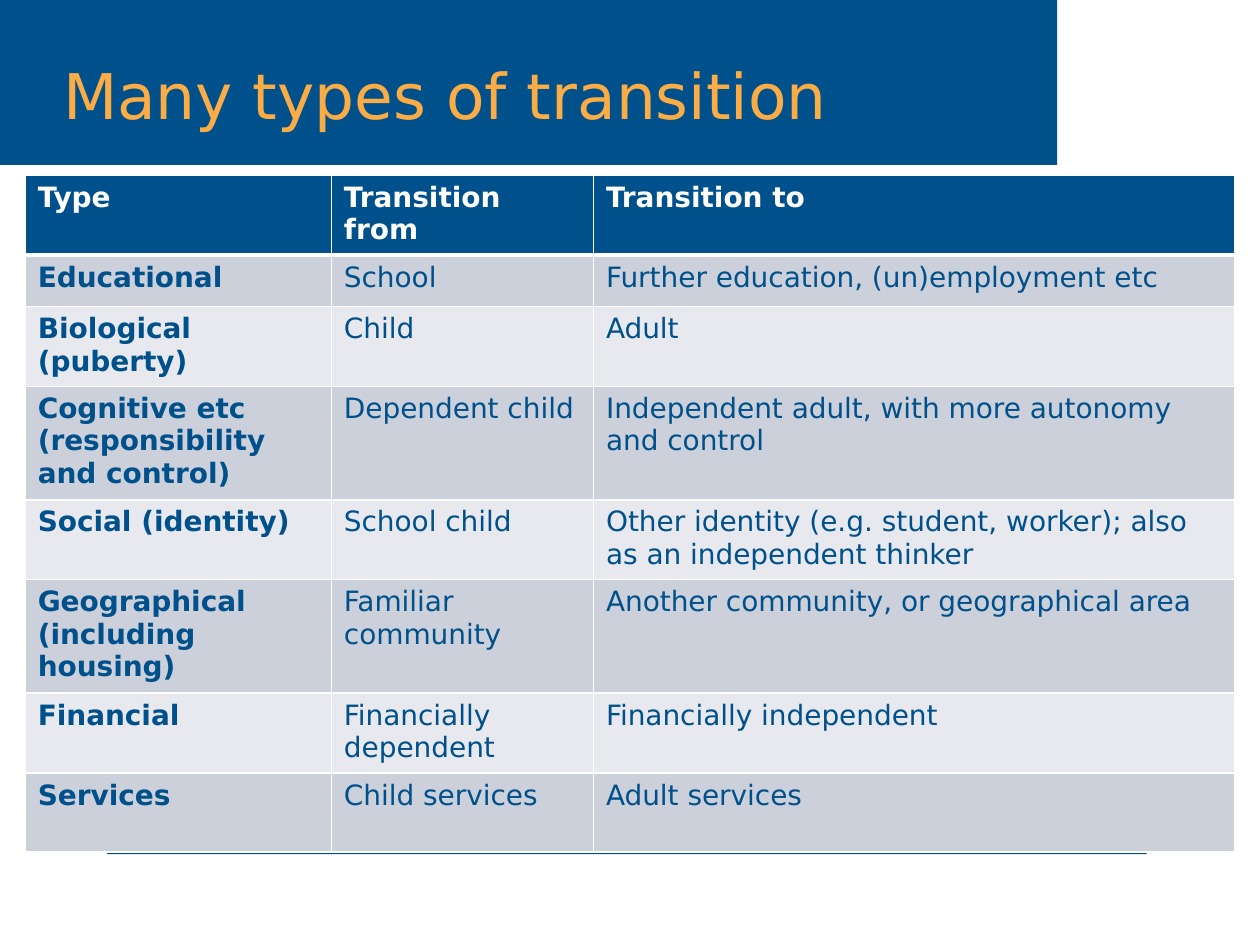
from lxml.etree import SubElement
from pptx import Presentation
from pptx.dml.color import RGBColor
from pptx.enum.shapes import MSO_SHAPE
from pptx.enum.text import MSO_ANCHOR
from pptx.oxml.ns import qn
from pptx.util import Inches, Pt

FONT = "DejaVu Sans"
BLUE = RGBColor(0x00, 0x50, 0x8B)
ORANGE = RGBColor(0xFB, 0xAC, 0x45)
WHITE = RGBColor(0xFF, 0xFF, 0xFF)
BAND_DARK = RGBColor(0xCC, 0xD0, 0xDA)
BAND_LIGHT = RGBColor(0xE7, 0xE9, 0xEE)

COL_WIDTHS = [2.43, 2.08, 5.09]
ROW_HEIGHTS = [0.63, 0.41, 0.41, 0.9, 0.63, 0.63, 0.63, 0.63]
ROWS = [
    ("Type", "Transition from", "Transition to"),
    ("Educational", "School", "Further education, (un)employment etc"),
    ("Biological (puberty)", "Child", "Adult"),
    ("Cognitive etc (responsibility and control)", "Dependent child",
     "Independent adult, with more autonomy and control"),
    ("Social (identity)", "School child",
     "Other identity (e.g. student, worker); also as an independent thinker"),
    ("Geographical (including housing)", "Familiar community",
     "Another community, or geographical area"),
    ("Financial", "Financially dependent", "Financially independent"),
    ("Services", "Child services", "Adult services"),
]


def write_text(tf, text, size=16, color=BLUE, bold=False):
    tf.word_wrap = True
    r = tf.paragraphs[0].add_run()
    r.text = text
    r.font.name = FONT
    r.font.size = Pt(size)
    r.font.bold = bold
    r.font.color.rgb = color


def add_bar(s, left, top, width, height):
    sp = s.shapes.add_shape(MSO_SHAPE.RECTANGLE, Inches(left), Inches(top),
                            Inches(width), Inches(height))
    sp.shadow.inherit = False
    sp.fill.solid()
    sp.fill.fore_color.rgb = BLUE
    sp.line.fill.background()


def add_title(s, text):
    sp = s.shapes.add_textbox(Inches(0.43), Inches(0.36), Inches(9.09), Inches(0.72))
    tf = sp.text_frame
    tf.vertical_anchor = MSO_ANCHOR.BOTTOM
    tf.margin_left = Inches(0.07)
    tf.margin_bottom = Inches(0.03)
    write_text(tf, text, size=36, color=ORANGE)


def set_borders(cell, bottom):
    tcPr = cell._tc.get_or_add_tcPr()
    widths = {"a:lnL": 1, "a:lnR": 1, "a:lnT": 1, "a:lnB": bottom}
    for i, (tag, width) in enumerate(widths.items()):
        ln = SubElement(tcPr, qn(tag), w=str(Pt(width)))
        fill = SubElement(ln, qn("a:solidFill"))
        SubElement(fill, qn("a:srgbClr"), val=str(WHITE))
        tcPr.insert(i, ln)


def add_transition_table(s):
    table = s.shapes.add_table(
        len(ROWS), len(COL_WIDTHS), Inches(0.2), Inches(1.39),
        Inches(sum(COL_WIDTHS)), Inches(sum(ROW_HEIGHTS))).table
    for column, width in zip(table.columns, COL_WIDTHS):
        column.width = Inches(width)
    for row, height in zip(table.rows, ROW_HEIGHTS):
        row.height = Inches(height)
    for i, texts in enumerate(ROWS):
        header = i == 0
        band = BLUE if header else BAND_DARK if i % 2 else BAND_LIGHT
        for j, text in enumerate(texts):
            cell = table.cell(i, j)
            cell.fill.solid()
            cell.fill.fore_color.rgb = band
            set_borders(cell, bottom=3 if header else 1)
            write_text(cell.text_frame, text, color=WHITE if header else BLUE,
                       bold=header or j == 0)


def main():
    prs = Presentation()
    prs.slide_width = Inches(10)
    prs.slide_height = Inches(7.5)
    s = prs.slides.add_slide(prs.slide_layouts[6])
    add_bar(s, -0.01, 0, 8.4, 1.31)
    add_bar(s, 0.85, 6.75, 8.25, 0.03)
    add_title(s, "Many types of transition")
    add_transition_table(s)
    prs.save("out.pptx")


if __name__ == "__main__":
    main()
